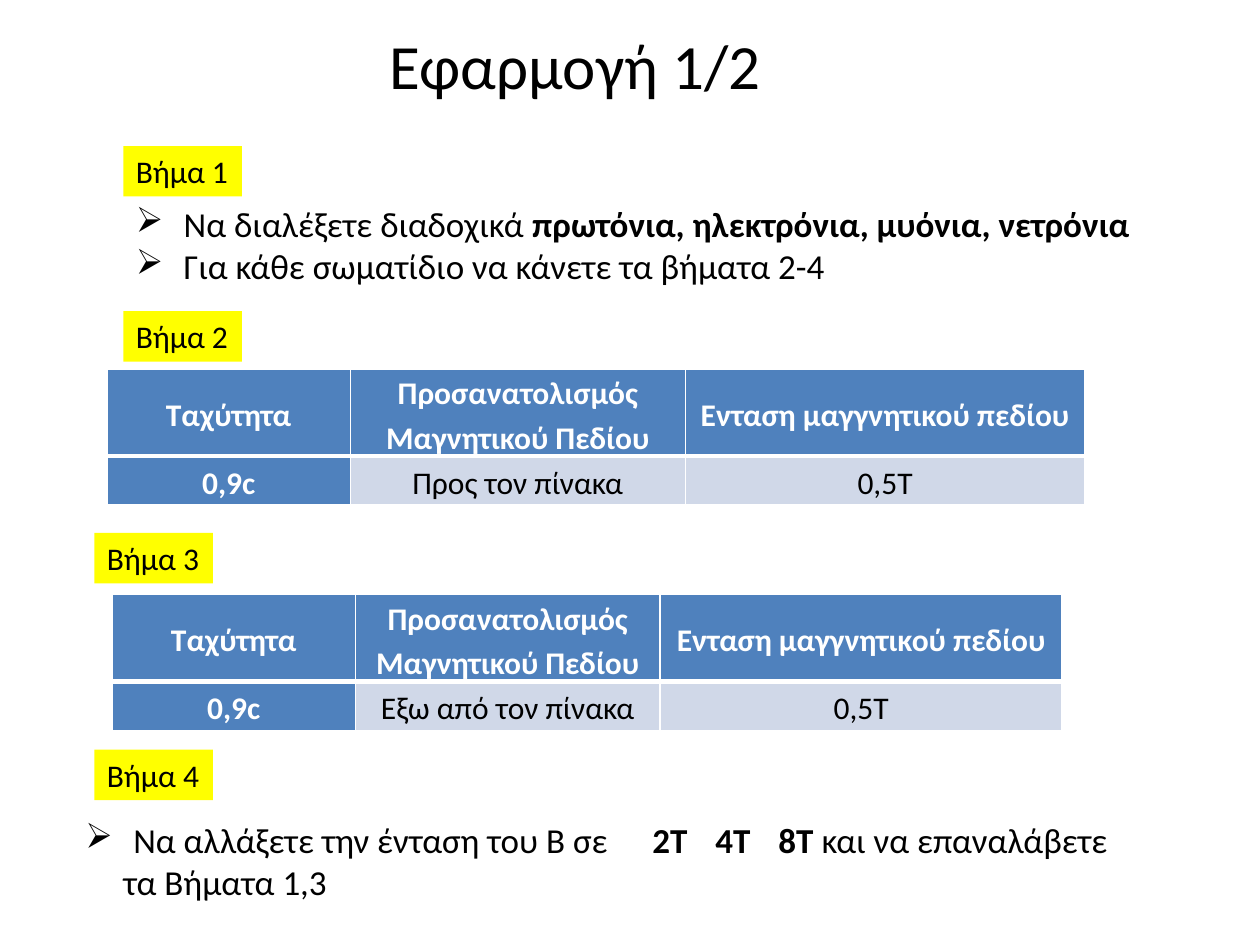
from lxml import etree
from pptx import Presentation
from pptx.dml.color import RGBColor
from pptx.enum.shapes import MSO_SHAPE
from pptx.enum.text import MSO_ANCHOR, MSO_AUTO_SIZE, PP_ALIGN
from pptx.oxml.ns import qn
from pptx.util import Inches, Pt

RECT = MSO_SHAPE.RECTANGLE
MIDDLE = MSO_ANCHOR.MIDDLE
GROW = MSO_AUTO_SIZE.SHAPE_TO_FIT_TEXT
LEFT, CENTER = PP_ALIGN.LEFT, PP_ALIGN.CENTER
BLACK, WHITE, YELLOW, BLUE, PALE = "000000", "FFFFFF", "FFFF00", "4F81BD", "D0D8E8"


def rgb(code):
    return RGBColor.from_string(code)


def write(shape, lines, size):
    """Fill a shape with lines, each a list of (text, bold) runs."""
    frame = shape.text_frame
    frame.word_wrap = False
    frame.auto_size = GROW
    for i, runs in enumerate(lines):
        para = frame.paragraphs[0] if i == 0 else frame.add_paragraph()
        para.alignment = LEFT
        para.font.name = "Calibri"
        para.font.size = Pt(size)
        para.font.color.rgb = rgb(BLACK)
        for text, bold in runs:
            run = para.add_run()
            run.text = text
            run.font.bold = bold
    return frame.paragraphs


prs = Presentation()
prs.slide_width, prs.slide_height = Inches(10), Inches(7.5)
slide = prs.slides.add_slide(prs.slide_layouts[6])
shapes = slide.shapes

# Title
title = shapes.add_textbox(Inches(2.99), Inches(0.16), Inches(3.18), Inches(0.71))
write(title, [[("Εφαρμογή 1/2", False)]], 36)

# Step labels
for num, (x, y) in enumerate([(0.98, 1.16), (0.98, 2.47), (0.75, 4.23), (0.75, 5.95)], 1):
    label = shapes.add_shape(RECT, Inches(x), Inches(y), Inches(0.94), Inches(0.4))
    label.shadow.inherit = False
    label.fill.solid()
    label.fill.fore_color.rgb = rgb(YELLOW)
    label.line.fill.background()
    write(label, [[(f"Βήμα {num}", False)]], 18)

# Tables of settings
heads = ["Ταχύτητα", "Προσανατολισμός Μαγνητικού Πεδίου", "Ενταση μαγγνητικού πεδίου"]
tables = [
    (0.85, 2.93, [1.93, 2.66, 3.17], "Προς τον πίνακα"),
    (0.89, 4.72, [1.93, 2.42, 3.19], "Εξω από τον πίνακα"),
]
for x, y, widths, field in tables:
    rows = [heads, ["0,9c", field, "0,5T"]]
    table = shapes.add_table(2, 3, Inches(x), Inches(y), Inches(sum(widths)), Inches(1.08)).table
    for col, width in zip(table.columns, widths):
        col.width = Inches(width)
    for row, height in zip(table.rows, [0.69, 0.39]):
        row.height = Inches(height)
    for r, texts in enumerate(rows):
        for c, text in enumerate(texts):
            cell = table.cell(r, c)
            strong = r == 0 or c == 0
            cell.vertical_anchor = MIDDLE
            cell.margin_left = cell.margin_right = Inches(0.07)
            cell.margin_top = cell.margin_bottom = 0
            props = cell._tc.get_or_add_tcPr()
            thick = "lnB" if r == 0 else "lnT"
            for side in ["lnL", "lnR", "lnT", "lnB"]:
                width = Pt(3 if side == thick else 1)
                line = etree.SubElement(props, qn(f"a:{side}"), w=str(width))
                paint = etree.SubElement(line, qn("a:solidFill"))
                etree.SubElement(paint, qn("a:srgbClr"), val=WHITE)
            cell.fill.solid()
            cell.fill.fore_color.rgb = rgb(BLUE if strong else PALE)
            para = cell.text_frame.paragraphs[0]
            para.text = text
            para.alignment = CENTER
            para.line_spacing = 1.15
            para.font.name = "Calibri"
            para.font.size = Pt(18)
            para.font.bold = strong
            para.font.color.rgb = rgb(WHITE if strong else BLACK)

# Instructions
first = shapes.add_textbox(Inches(0.98), Inches(1.56), Inches(8.15), Inches(0.77))
picks = write(first, [
    [("Να διαλέξετε διαδοχικά ", False), ("πρωτόνια, ηλεκτρόνια, μυόνια, νετρόνια", True)],
    [("Για κάθε σωματίδιο να κάνετε τα βήματα 2-4", False)],
], 20)
last = shapes.add_textbox(Inches(0.58), Inches(6.45), Inches(8.45), Inches(0.77))
change, rest = write(last, [
    [("Να αλλάξετε την ένταση του Β σε \t", False), ("2T\t4T\t8T ", True),
     ("και να επαναλάβετε", False)],
    [("τα Βήματα 1,3", False)],
], 20)
rest._p.get_or_add_pPr().set("marL", str(Inches(0.3)))

for para in [*picks, change]:
    props = para._p.get_or_add_pPr()
    props.set("marL", str(Inches(0.38)))
    props.set("indent", str(-Inches(0.38)))
    mark = etree.Element(qn("a:buChar"), char="➢")
    props.insert(0, mark)
    if para is change:
        tabs = etree.Element(qn("a:tabLst"))
        for stop in [4.5, 5, 5.5]:
            etree.SubElement(tabs, qn("a:tab"), pos=str(Inches(stop)), algn="l")
        mark.addnext(tabs)

prs.save("out.pptx")
